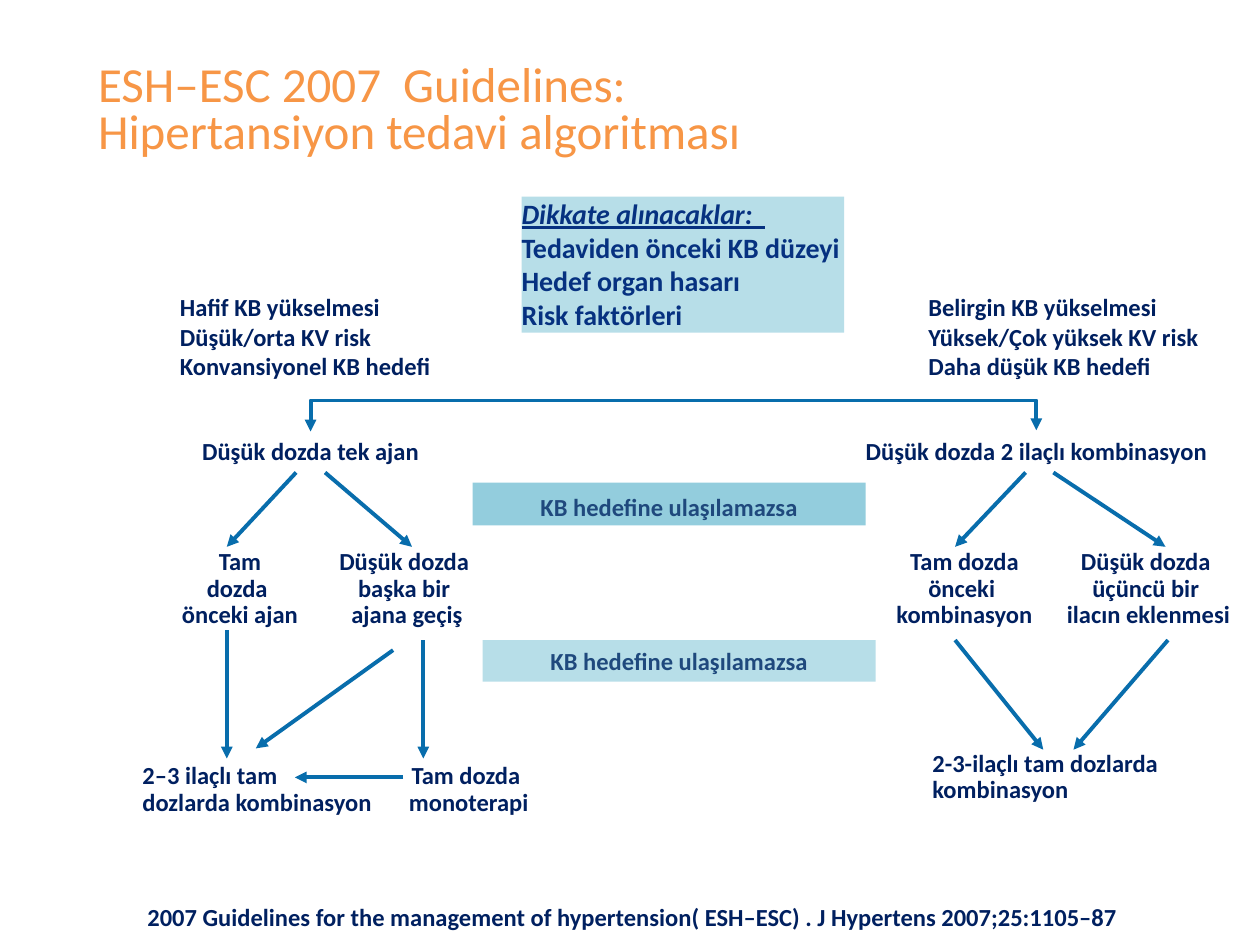
from dataclasses import dataclass

from lxml.etree import SubElement
from pptx import Presentation
from pptx.dml.color import RGBColor
from pptx.enum.shapes import MSO_CONNECTOR, MSO_SHAPE
from pptx.enum.text import MSO_ANCHOR, MSO_AUTO_SIZE, PP_ALIGN
from pptx.oxml.ns import qn
from pptx.util import Inches, Pt


@dataclass(frozen=True)
class Theme:
    font: str = "Calibri"
    orange: str = "F79646"
    navy: str = "002060"
    blue: str = "063180"
    slate: str = "1F497D"
    arrow: str = "086DAC"
    pale: str = "B7DEE8"
    aqua: str = "93CDDD"
    title_size: int = 28
    factors_size: int = 16
    body_size: int = 14
    arrow_width: float = 2.25


THEME = Theme()
LEFT, CENTER = PP_ALIGN.LEFT, PP_ALIGN.CENTER
TIGHT = (0.04, 0.04, 0.04, 0.04)
ROOMY = (0.1, 0.05, 0.1, 0.05)

RISK_TOP, START_TOP, OPTION_TOP, RESULT_TOP = 2.27, 3.42, 4.32, 6.02
BRANCH_START, BRANCH_END = 3.75, 4.34
MERGE_START, MERGE_END = 5.08, 5.95
BRACKET_LEFT, BRACKET_RIGHT, BRACKET_RISE = 2.46, 8.22, 0.25

TITLE = "ESH–ESC 2007  Guidelines: \vHipertansiyon tedavi algoritması"
FACTORS = ("Dikkate alınacaklar:  \nTedaviden önceki KB düzeyi\n"
           "Hedef organ hasarı\nRisk faktörleri")
CITATION = ("2007 Guidelines for the management of hypertension( ESH–ESC) . "
            "J Hypertens 2007;25:1105–87")
MISSED_TARGET = "KB hedefine ulaşılamazsa"

RISKS = [
    (1.33, 2.2, "Hafif KB yükselmesi\vDüşük/orta KV risk\nKonvansiyonel KB hedefi"),
    (7.27, 2.36, "Belirgin KB yükselmesi\vYüksek/Çok yüksek KV risk\nDaha düşük KB hedefi"),
]
STARTS = [
    (1.56, 1.81, "Düşük dozda tek ajan"),
    (6.82, 2.81, "Düşük dozda 2 ilaçlı kombinasyon"),
]
OPTIONS = [
    (1.4, 1.01, "Tam\ndozda \nönceki ajan"),
    (2.65, 1.16, "Düşük dozda \nbaşka bir \najana geçiş"),
    (7.07, 1.17, "Tam dozda\nönceki \nkombinasyon"),
    (8.42, 1.39, "Düşük dozda \nüçüncü bir \nilacın eklenmesi"),
]
RESULTS = [
    (1.09, RESULT_TOP, 1.91, LEFT, "2–3 ilaçlı tam\ndozlarda kombinasyon"),
    (3.2, RESULT_TOP, 1.04, CENTER, "Tam dozda \nmonoterapi"),
    (7.36, 5.92, 1.89, LEFT, "2-3-ilaçlı tam dozlarda\nkombinasyon"),
]
CONDITIONS = [
    (3.75, 3.83, 0.34, THEME.aqua, 1.1),
    (3.83, 5.08, 0.33, THEME.pale, 1.0),
]
BRANCHES = [(2.35, 1.8), (2.58, 3.27), (8.14, 7.58), (8.36, 9.25)]
MERGES = [(7.58, 8.28), (9.27, 8.52)]
OUTCOMES = [
    (3.12, 5.16, 2.03, 5.94),
    (1.8, 5, 1.8, RESULT_TOP),
    (3.2, 6.17, 2.34, 6.17),
    (3.36, MERGE_START, 3.36, RESULT_TOP),
]


def add_text(slide, box, text, color=THEME.navy, size=THEME.body_size, bold=True,
             fill=None, align=LEFT, spacing=1.0, insets=TIGHT, wrap=False,
             anchor=MSO_ANCHOR.TOP):
    bounds = [Inches(length) for length in box]
    if fill:
        label = slide.shapes.add_shape(MSO_SHAPE.RECTANGLE, *bounds)
        label.shadow.inherit = False
        label.fill.solid()
        label.fill.fore_color.rgb = RGBColor.from_string(fill)
        label.line.fill.background()
    else:
        label = slide.shapes.add_textbox(*bounds)
    frame = label.text_frame
    frame.text = text
    frame.word_wrap = wrap
    frame.auto_size = MSO_AUTO_SIZE.NONE if wrap else MSO_AUTO_SIZE.SHAPE_TO_FIT_TEXT
    frame.vertical_anchor = anchor
    (frame.margin_left, frame.margin_top,
     frame.margin_right, frame.margin_bottom) = map(Inches, insets)
    for paragraph in frame.paragraphs:
        paragraph.alignment = align
        paragraph.line_spacing = spacing
        for run in paragraph.runs:
            run.font.name = THEME.font
            run.font.size = Pt(size)
            run.font.bold = bold
            run.font.color.rgb = RGBColor.from_string(color)
    return frame


def add_arrow(slide, x1, y1, x2, y2, kind=MSO_CONNECTOR.STRAIGHT, ends=("tailEnd",)):
    arrow = slide.shapes.add_connector(kind, *map(Inches, (x1, y1, x2, y2)))
    arrow.line.color.rgb = RGBColor.from_string(THEME.arrow)
    arrow.line.width = Pt(THEME.arrow_width)
    for end in ends:
        SubElement(arrow.line._get_or_add_ln(), qn(f"a:{end}"), type="triangle")
    SubElement(arrow._element.spPr, qn("a:effectLst"))
    return arrow


def add_bracket(slide):
    thickness = 0.01
    span = BRACKET_RIGHT - BRACKET_LEFT
    middle = (BRACKET_LEFT + BRACKET_RIGHT) / 2
    top = START_TOP - span / 2
    bracket = add_arrow(slide, middle, top, middle + thickness, top + span,
                        MSO_CONNECTOR.ELBOW, ("headEnd", "tailEnd"))
    properties = bracket._element.spPr
    frame = properties.find(qn("a:xfrm"))
    for name, value in (("rot", "5400000"), ("flipH", "1"), ("flipV", "1")):
        frame.set(name, value)
    adjustments = properties.find(qn("a:prstGeom")).get_or_add_avLst()
    rise = round(BRACKET_RISE / thickness * 100000)
    SubElement(adjustments, qn("a:gd"), name="adj1", fmla=f"val {rise}")


def main():
    presentation = Presentation()
    presentation.slide_width, presentation.slide_height = Inches(10), Inches(7.5)
    slide = presentation.slides.add_slide(presentation.slide_layouts[6])

    add_text(slide, (0.68, 0.42, 8.73, 0.94), TITLE, THEME.orange, THEME.title_size,
             bold=False, spacing=0.8, insets=ROOMY, wrap=True, anchor=MSO_ANCHOR.MIDDLE)
    factors = add_text(slide, (4.14, 1.56, 2.56, 1.08), FACTORS, THEME.blue,
                       THEME.factors_size, fill=THEME.pale, insets=(0, 0, 0, 0))
    heading = factors.paragraphs[0].runs[0].font
    heading.italic = heading.underline = True

    for left, width, text in RISKS:
        add_text(slide, (left, RISK_TOP, width, 0.81), text, insets=ROOMY)
    for left, width, text in STARTS:
        add_text(slide, (left, START_TOP, width, 0.32), text, align=CENTER)
    for left, width, text in OPTIONS:
        add_text(slide, (left, OPTION_TOP, width, 0.72), text, align=CENTER, spacing=0.9)
    for left, top, width, align, text in RESULTS:
        add_text(slide, (left, top, width, 0.5), text, align=align, spacing=0.9)
    for left, top, height, fill, spacing in CONDITIONS:
        add_text(slide, (left, top, 3.12, height), MISSED_TARGET, THEME.slate, fill=fill,
                 align=CENTER, spacing=spacing, insets=ROOMY, wrap=True)

    add_bracket(slide)
    for start, end in BRANCHES:
        add_arrow(slide, start, BRANCH_START, end, BRANCH_END)
    for start, end in MERGES:
        add_arrow(slide, start, MERGE_START, end, MERGE_END)
    for outcome in OUTCOMES:
        add_arrow(slide, *outcome)

    add_text(slide, (1.17, 7.16, 7.87, 0.35), CITATION, insets=(0, 0, 0.12, 0.12),
             anchor=MSO_ANCHOR.BOTTOM)
    presentation.save("out.pptx")


if __name__ == "__main__":
    main()
